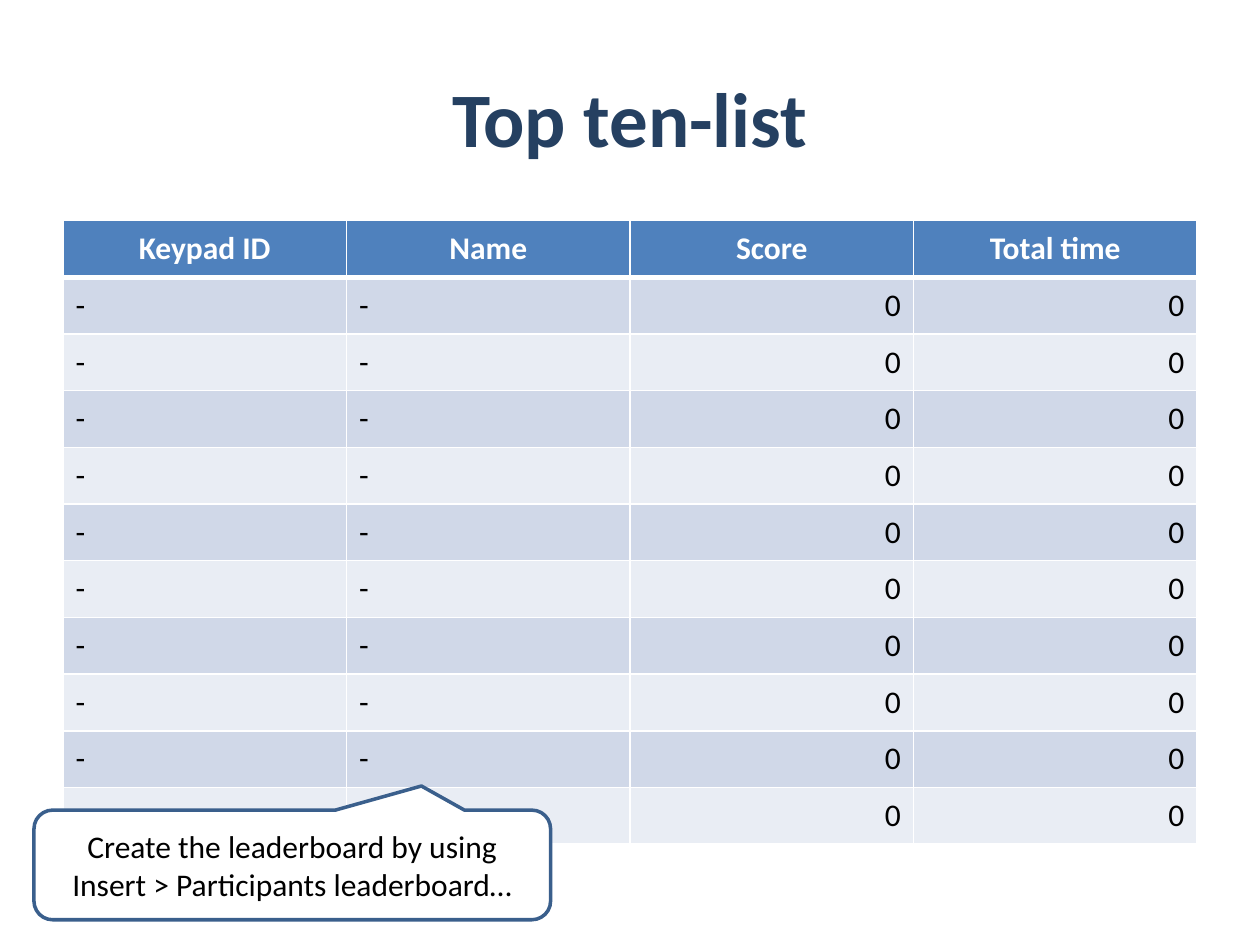
import pptx
import pptx.dml.color
import pptx.enum.shapes
import pptx.enum.text
import pptx.oxml
import pptx.oxml.ns
import pptx.util

Inches = pptx.util.Inches
Pt = pptx.util.Pt
Align = pptx.enum.text.PP_ALIGN
Middle = pptx.enum.text.MSO_ANCHOR.MIDDLE


def color(hex_code):
    return pptx.dml.color.RGBColor.from_string(hex_code)


class LeaderboardSlide:
    """Holds the leaderboard style and the slide being built."""

    font_name = "Calibri"
    white, black, navy = "FFFFFF", "000000", "254061"
    header_fill, outline = "4F81BD", "3A5F8C"
    bands = ("D0D8E8", "E9EDF4")

    def __init__(self, presentation):
        self.slide = presentation.slides.add_slide(presentation.slide_layouts[6])

    def set_text(self, frame, text, size, hex_code, align, bold=False):
        frame.word_wrap = True
        paragraph = frame.paragraphs[0]
        paragraph.text = text
        paragraph.alignment = align
        for run in paragraph.runs:
            run.font.name = self.font_name
            run.font.size = Pt(size)
            run.font.bold = bold
            run.font.color.rgb = color(hex_code)

    def title(self, text, left, top, width, height):
        heading = self.slide.shapes.add_textbox(
            Inches(left), Inches(top), Inches(width), Inches(height))
        heading.text_frame.vertical_anchor = Middle
        self.set_text(heading.text_frame, text, 44, self.navy, Align.CENTER, True)

    def border(self, cell, side, points):
        properties = cell._tc.get_or_add_tcPr()
        properties.append(pptx.oxml.parse_xml(
            f'<a:{side} {pptx.oxml.ns.nsdecls("a")} w="{Pt(points)}"><a:solidFill>'
            f'<a:srgbClr val="{self.white}"/></a:solidFill></a:{side}>'))

    def table(self, rows, left, top, width, row_height):
        grid = self.slide.shapes.add_table(
            len(rows), len(rows[0]), Inches(left), Inches(top),
            Inches(width), Inches(row_height * len(rows))).table
        for row_index, row in enumerate(rows):
            for column_index, value in enumerate(row):
                cell = grid.cell(row_index, column_index)
                is_header = row_index == 0
                self.border(cell, "lnL", 1)
                self.border(cell, "lnR", 1)
                self.border(cell, "lnT", 3 if row_index == 1 else 1)
                self.border(cell, "lnB", 3 if is_header else 1)
                cell.vertical_anchor = Middle
                cell.fill.solid()
                if is_header:
                    fill, ink, align = self.header_fill, self.white, Align.CENTER
                else:
                    fill, ink = self.bands[(row_index - 1) % 2], self.black
                    align = Align.RIGHT if value.isdigit() else Align.LEFT
                cell.fill.fore_color.rgb = color(fill)
                self.set_text(cell.text_frame, value, 18, ink, align, is_header)

    def callout(self, text, left, top, width, height, adjustments):
        hint = self.slide.shapes.add_shape(
            pptx.enum.shapes.MSO_SHAPE.ROUNDED_RECTANGULAR_CALLOUT,
            Inches(left), Inches(top), Inches(width), Inches(height))
        for index, value in enumerate(adjustments):
            hint.adjustments[index] = value
        hint.shadow.inherit = False
        hint.fill.solid()
        hint.fill.fore_color.rgb = color(self.white)
        hint.line.color.rgb = color(self.outline)
        hint.line.width = Pt(2)
        hint.text_frame.vertical_anchor = Middle
        self.set_text(hint.text_frame, text, 18, self.black, Align.CENTER)


def main():
    presentation = pptx.Presentation()
    presentation.slide_width = Inches(10)
    presentation.slide_height = Inches(7.5)
    leaderboard = LeaderboardSlide(presentation)
    leaderboard.title("Top ten-list", 0.5, 0.3, 9, 1.25)
    headings = ["Keypad ID", "Name", "Score", "Total time"]
    standings = [["-", "-", "0", "0"]] * 10
    leaderboard.table([headings] + standings, 0.5, 1.75, 9, 0.45)
    leaderboard.callout(
        "Create the leaderboard by using\nInsert > Participants leaderboard…",
        0.27, 6.43, 4.1, 0.87, (0.25, -0.72, 0.17))
    presentation.save("out.pptx")


if __name__ == "__main__":
    main()
